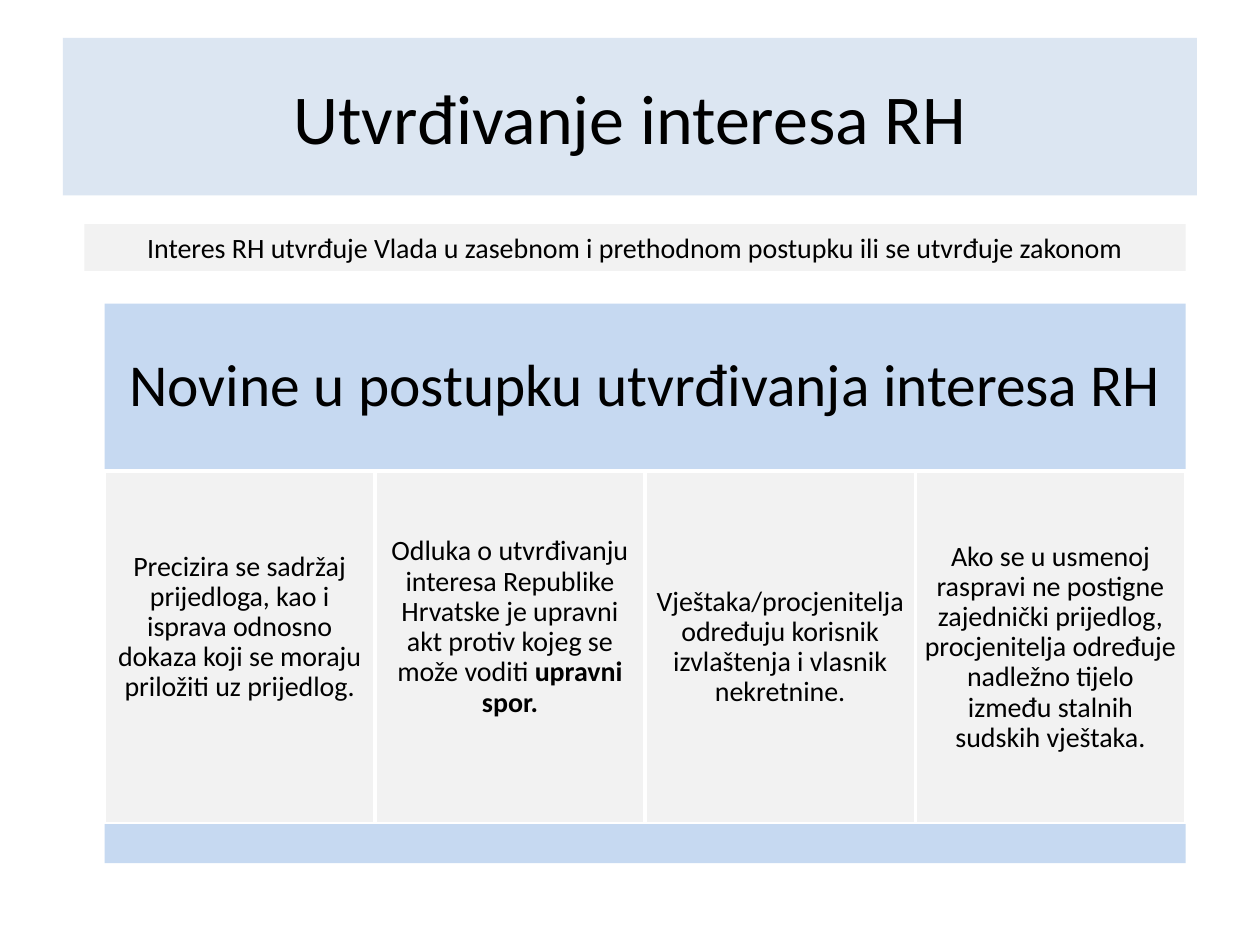
from dataclasses import dataclass

from pptx import Presentation
from pptx.dml.color import RGBColor
from pptx.enum import shapes, text
from pptx.util import Inches, Pt

FONT = "Calibri"
BLACK, WHITE = "000000", "FFFFFF"
TITLE_BLUE, BLUE, GREY = "DCE6F2", "C6D9F1", "F2F2F2"


@dataclass
class Run:
    text: str
    bold: bool = False


@dataclass
class Panel:
    left: float
    top: float
    width: float
    height: float
    fill: str
    runs: tuple[Run, ...] = ()
    size: int = 16
    line_spacing: float = 1.0
    inset: float = 0.05
    bottom_inset: float = 0.05
    outlined: bool = False


@dataclass
class Novelty:
    runs: tuple[Run, ...]
    raised: bool = False


def rgb(hex_value: str) -> RGBColor:
    return RGBColor.from_string(hex_value)


def draw_panel(slide, panel: Panel) -> None:
    rectangle = slide.shapes.add_shape(
        shapes.MSO_SHAPE.RECTANGLE,
        Inches(panel.left), Inches(panel.top),
        Inches(panel.width), Inches(panel.height),
    )
    rectangle.shadow.inherit = False
    rectangle.fill.solid()
    rectangle.fill.fore_color.rgb = rgb(panel.fill)
    if panel.outlined:
        rectangle.line.color.rgb = rgb(WHITE)
        rectangle.line.width = Pt(2)
    else:
        rectangle.line.fill.background()

    frame = rectangle.text_frame
    frame.word_wrap = True
    frame.vertical_anchor = text.MSO_ANCHOR.MIDDLE
    frame.margin_left = frame.margin_right = frame.margin_top = Inches(panel.inset)
    frame.margin_bottom = Inches(panel.bottom_inset)
    paragraph = frame.paragraphs[0]
    paragraph.alignment = text.PP_ALIGN.CENTER
    paragraph.line_spacing = panel.line_spacing
    for part in panel.runs:
        run = paragraph.add_run()
        run.text = part.text
        run.font.name = FONT
        run.font.size = Pt(panel.size)
        run.font.bold = part.bold
        run.font.color.rgb = rgb(BLACK)


NOVELTIES = (
    Novelty((Run("Precizira se sadržaj prijedloga, kao i isprava odnosno dokaza "
                 "koji se moraju priložiti uz prijedlog."),), raised=True),
    Novelty((Run("Odluka o utvrđivanju interesa Republike Hrvatske je upravni akt "
                 "protiv kojeg se može voditi "),
             Run("upravni spor.", bold=True)), raised=True),
    Novelty((Run("Vještaka/procjenitelja određuju korisnik izvlaštenja "
                 "i vlasnik nekretnine."),)),
    Novelty((Run("Ako se u usmenoj raspravi ne postigne zajednički prijedlog, "
                 "procjenitelja određuje nadležno tijelo između stalnih "
                 "sudskih vještaka."),)),
)

BLOCK_LEFT, BLOCK_TOP, BLOCK_WIDTH = 0.83, 2.41, 8.58
HEADER_HEIGHT, COLUMN_HEIGHT, FOOTER_HEIGHT = 1.33, 2.8, 0.31
COLUMN_TOP = BLOCK_TOP + HEADER_HEIGHT
COLUMN_WIDTH = BLOCK_WIDTH / len(NOVELTIES)
COLUMN_INSET, RAISED_INSET = 0.07, 0.39


def main() -> None:
    presentation = Presentation()
    presentation.slide_width = Inches(10)
    presentation.slide_height = Inches(7.5)
    slide = presentation.slides.add_slide(presentation.slide_layouts[6])

    draw_panel(slide, Panel(0.5, 0.3, 9, 1.25, TITLE_BLUE,
                            (Run("Utvrđivanje interesa RH"),), size=40))
    draw_panel(slide, Panel(0.67, 1.78, 8.74, 0.37, GREY,
                            (Run("Interes RH utvrđuje Vlada u zasebnom i prethodnom "
                                 "postupku ili se utvrđuje zakonom"),)))
    draw_panel(slide, Panel(BLOCK_LEFT, BLOCK_TOP, BLOCK_WIDTH, HEADER_HEIGHT, BLUE,
                            (Run("Novine u postupku utvrđivanja interesa RH"),),
                            size=34, line_spacing=0.9, inset=0.14, bottom_inset=0.14))
    for index, novelty in enumerate(NOVELTIES):
        draw_panel(slide, Panel(
            BLOCK_LEFT + index * COLUMN_WIDTH, COLUMN_TOP, COLUMN_WIDTH, COLUMN_HEIGHT,
            GREY, novelty.runs, line_spacing=0.9, inset=COLUMN_INSET,
            bottom_inset=RAISED_INSET if novelty.raised else COLUMN_INSET,
            outlined=True,
        ))
    draw_panel(slide, Panel(BLOCK_LEFT, COLUMN_TOP + COLUMN_HEIGHT,
                            BLOCK_WIDTH, FOOTER_HEIGHT, BLUE))

    presentation.save("out.pptx")


if __name__ == "__main__":
    main()
